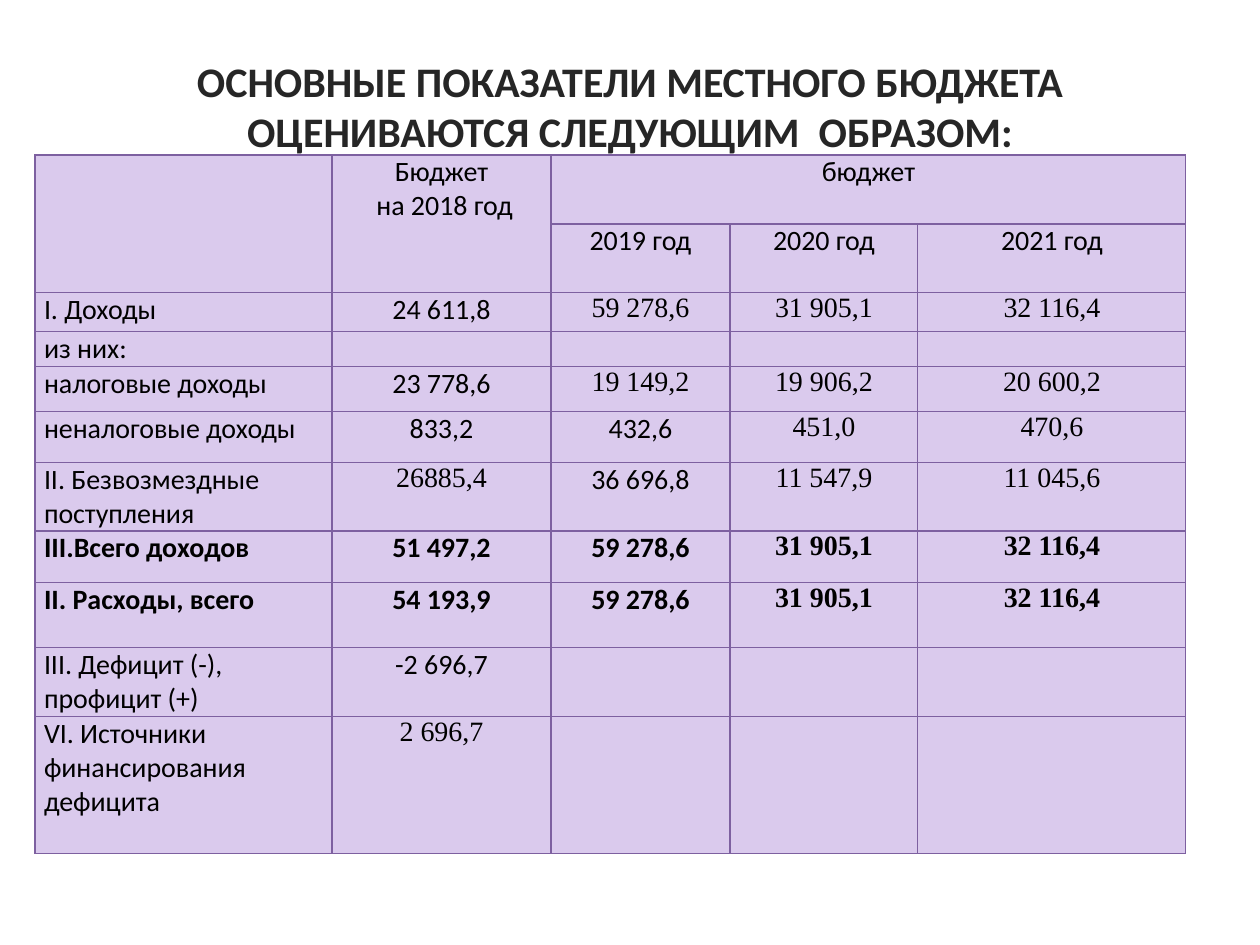
import pptx
import pptx.util
import pptx.dml.color
import pptx.enum.text
import pptx.oxml
import pptx.oxml.ns
from lxml import etree

COLORS = {"title": "262626", "outline": "5E457C", "text": "000000",
          "cell": "DACAED", "border": "7D60A0"}
SANS, SERIF = "Calibri", "Times New Roman"
ALIGN = pptx.enum.text.PP_ALIGN

TITLE = "ОСНОВНЫЕ ПОКАЗАТЕЛИ МЕСТНОГО БЮДЖЕТА ОЦЕНИВАЮТСЯ СЛЕДУЮЩИМ  ОБРАЗОМ:"
HEADER = [
    ["", "Бюджет\n на 2018 год", "бюджет", "", ""],
    ["", "", "2019 год", "2020 год", "2021 год"],
]
# label, values by year, table columns set in the serif font, bold
ROWS = [
    ("I. Доходы", ["24 611,8", "59 278,6", "31 905,1", "32 116,4"], {2, 3, 4}, False),
    ("из них:", ["", "", "", ""], set(), False),
    ("налоговые доходы", ["23 778,6", "19 149,2", "19 906,2", "20 600,2"], {2, 3, 4}, False),
    ("неналоговые доходы", ["833,2", "432,6", "451,0", "470,6"], {3, 4}, False),
    ("II. Безвозмездные поступления", ["26885,4", "36 696,8", "11 547,9", "11 045,6"],
     {1, 3, 4}, False),
    ("III.Всего доходов", ["51 497,2", "59 278,6", "31 905,1", "32 116,4"], {3, 4}, True),
    ("II. Расходы, всего", ["54 193,9", "59 278,6", "31 905,1", "32 116,4"], {3, 4}, True),
    ("III. Дефицит (-), профицит (+)\u00a0".replace("\u00a0", " ").strip(),
     ["-2 696,7", "", "", ""], set(), False),
    ("VI. Источники финансирования дефицита", ["2 696,7", "", "", ""], {1}, False),
]
MERGES = [((0, 0), (1, 0)), ((0, 1), (1, 1)), ((0, 2), (0, 4))]
COLUMN_WIDTHS = [297, 219, 179, 188, 268]
ROW_HEIGHTS = [69, 68, 39, 35, 45, 51, 68, 52, 65, 68, 137]


def px(length):
    return pptx.util.Emu(round(length * 914400 / 126))


def rgb(name):
    return pptx.dml.color.RGBColor.from_string(COLORS[name])


def write(frame, text, size=16, font=SANS, color="text", bold=False, align=ALIGN.CENTER):
    for index, line in enumerate(text.split("\n")):
        para = frame.add_paragraph() if index else frame.paragraphs[0]
        para.alignment = align
        if not line:
            para._p.get_or_add_endParaRPr().set("sz", str(size * 100))
            continue
        span = para.add_run()
        span.text = line
        span.font.size = pptx.util.Pt(size)
        span.font.name = font
        span.font.bold = bold
        span.font.color.rgb = rgb(color)


def add_line(parent, tag, width, color, position=None):
    """Add a solid line element, such as a cell border or a text outline."""
    line = etree.Element(pptx.oxml.ns.qn(tag), w=str(pptx.util.Pt(width)))
    fill = etree.SubElement(line, pptx.oxml.ns.qn("a:solidFill"))
    etree.SubElement(fill, pptx.oxml.ns.qn("a:srgbClr"), val=COLORS[color])
    parent.insert(len(parent) if position is None else position, line)


def style_cell(cell):
    cell.margin_left = cell.margin_right = px(9)
    cell.margin_top = cell.margin_bottom = 0
    for side in ("L", "R", "T", "B"):
        add_line(cell._tc.get_or_add_tcPr(), f"a:ln{side}", 0.75, "border")
    cell.fill.solid()
    cell.fill.fore_color.rgb = rgb("cell")


def add_title(page):
    title = page.shapes.title
    title.left, title.top, title.width, title.height = map(px, (63, 16, 1134, 179))
    frame = title.text_frame
    frame.word_wrap = True
    frame.vertical_anchor = pptx.enum.text.MSO_ANCHOR.MIDDLE
    write(frame, TITLE, size=24, color="title", bold=True)
    add_line(frame.paragraphs[0].runs[0].font._element, "a:ln", 0.71, "outline", 0)


def add_budget_table(page):
    table = page.shapes.add_table(
        len(ROW_HEIGHTS), len(COLUMN_WIDTHS), px(35), px(155),
        px(sum(COLUMN_WIDTHS)), px(sum(ROW_HEIGHTS))).table
    for column, width in zip(table.columns, COLUMN_WIDTHS):
        column.width = px(width)
    for row, height in zip(table.rows, ROW_HEIGHTS):
        row.height = px(height)
    for start, end in MERGES:
        table.cell(*start).merge(table.cell(*end))

    rows = [(texts, set(), False) for texts in HEADER]
    rows += [([label] + values, serif, bold) for label, values, serif, bold in ROWS]
    for row, (texts, serif, bold) in enumerate(rows):
        for column, text in enumerate(texts):
            cell = table.cell(row, column)
            style_cell(cell)
            write(cell.text_frame, text, bold=bold,
                  font=SERIF if column in serif else SANS,
                  align=ALIGN.CENTER if column else ALIGN.LEFT)
    table.cell(len(HEADER), 0).text_frame.paragraphs[0].alignment = ALIGN.JUSTIFY


def main():
    deck = pptx.Presentation()
    deck.slide_width, deck.slide_height = px(1260), px(945)
    page = deck.slides.add_slide(deck.slide_layouts[5])
    add_title(page)
    add_budget_table(page)
    deck.save("out.pptx")


if __name__ == "__main__":
    main()
